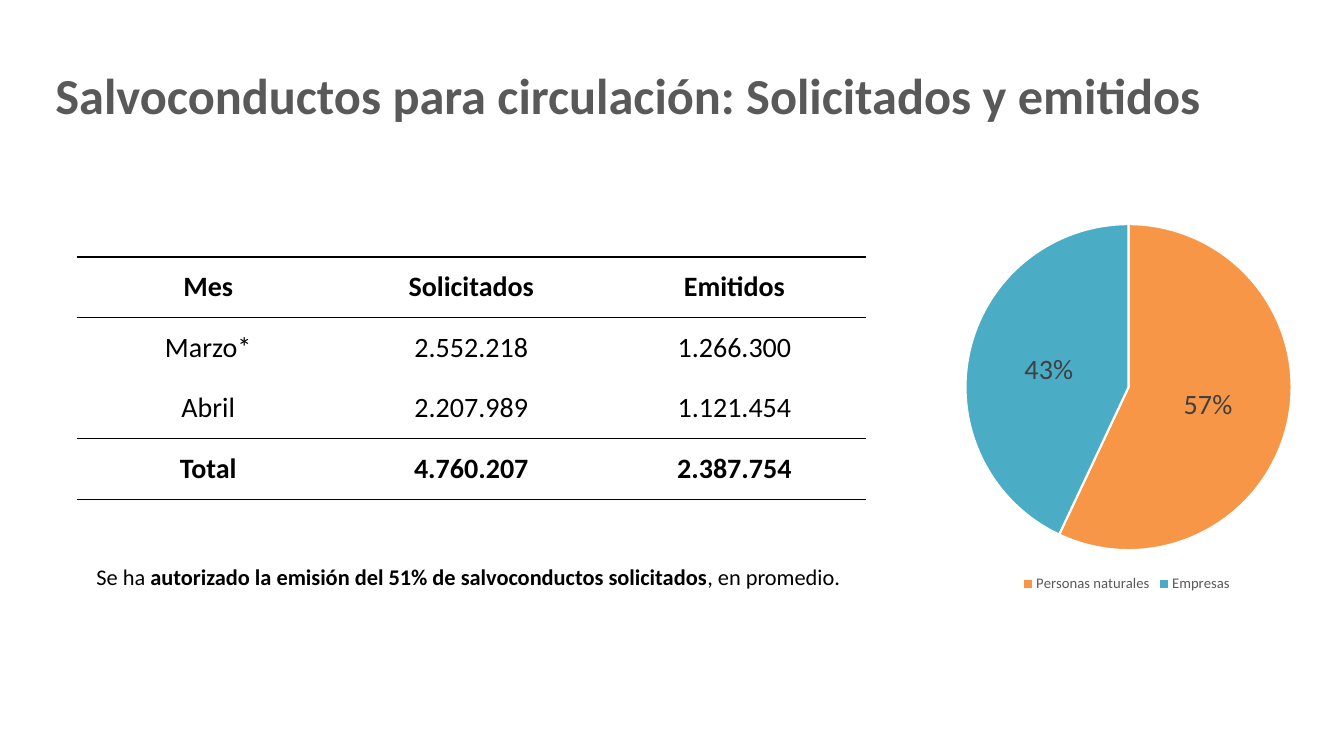
import pptx
import pptx.chart.data
import pptx.dml.color
import pptx.enum.chart
import pptx.enum.text
import pptx.oxml
import pptx.oxml.ns
import pptx.util

PX = 9144
FONT = "Calibri"
BLACK, GREY, DARK, WHITE = "000000", "595959", "404040", "FFFFFF"
PLAIN_TABLE = "{2D5ABB26-0587-4C30-8999-92F81FD0307C}"
NS = pptx.oxml.ns.nsdecls
ANCHOR = pptx.enum.text.MSO_ANCHOR
ALIGN = pptx.enum.text.PP_ALIGN

ROWS = [
    ("Mes", "Solicitados", "Emitidos"),
    ("Marzo*", "2.552.218", "1.266.300"),
    ("Abril", "2.207.989", "1.121.454"),
    ("Total", "4.760.207", "2.387.754"),
]
RULED_ROWS = (0, 3)
SHARES = {"Personas naturales": (0.57, "F79646"), "Empresas": (0.43, "4BACC6")}
NOTE = [
    ("Se ha ", False),
    ("autorizado la emisión del 51% de salvoconductos solicitados", True),
    (", en promedio.", False),
]


def px(*lengths):
    return [pptx.util.Emu(length * PX) for length in lengths]


def colour(value):
    return pptx.dml.color.RGBColor.from_string(value)


def assign(target, **values):
    for name, value in values.items():
        setattr(target, name, value)


class Slide:
    """Holds the text style and the current page, and adds elements to it."""

    def __init__(self, deck, font):
        self.font = font
        self.page = deck.slides.add_slide(deck.slide_layouts[6])

    def style(self, font, size, shade, bold=False):
        assign(font, name=self.font, size=pptx.util.Pt(size), bold=bold)
        font.color.rgb = colour(shade)

    def add_spans(self, para, spans, size, shade, align):
        para.alignment = align
        for text, bold in spans:
            span = para.add_run()
            span.text = text
            self.style(span.font, size, shade, bold)

    def text(self, place, spans, size, shade, align, anchor, insets):
        frame = self.page.shapes.add_textbox(*px(*place)).text_frame
        side, edge = px(*insets)
        assign(frame, word_wrap=True, vertical_anchor=anchor, margin_left=side,
               margin_right=side, margin_top=edge, margin_bottom=edge)
        self.add_spans(frame.paragraphs[0], spans, size, shade, align)

    def rule(self, cell):
        for side in ("lnT", "lnB"):
            cell._tc.get_or_add_tcPr().append(pptx.oxml.parse_xml(
                f'<a:{side} {NS("a")} w="12700"><a:solidFill>'
                f'<a:srgbClr val="{BLACK}"/></a:solidFill></a:{side}>'))

    def table(self, place, rows, ruled_rows, size):
        frame = self.page.shapes.add_table(len(rows), len(rows[0]), *px(*place))
        table = frame.table
        assign(table, first_row=False, horz_banding=False)
        table._tbl.tblPr.find(pptx.oxml.ns.qn("a:tableStyleId")).text = PLAIN_TABLE
        side, edge = px(27, 13)
        for r, row in enumerate(rows):
            ruled = r in ruled_rows
            for c, text in enumerate(row):
                cell = table.cell(r, c)
                assign(cell, vertical_anchor=ANCHOR.BOTTOM, margin_left=side,
                       margin_right=side, margin_top=edge, margin_bottom=edge)
                if ruled:
                    self.rule(cell)
                cell.fill.background()
                self.add_spans(cell.text_frame.paragraphs[0], [(text, ruled)],
                               size, BLACK, ALIGN.CENTER)

    def pie(self, place, shares, layout):
        data = pptx.chart.data.CategoryChartData(number_format="0%")
        data.categories = list(shares)
        data.add_series("Series 1", [share for share, _ in shares.values()])
        kind = pptx.enum.chart.XL_CHART_TYPE.PIE
        chart = self.page.shapes.add_chart(kind, *px(*place), data).chart
        assign(chart, has_title=False, has_legend=True)
        self.style(chart.font, 10, BLACK)
        assign(chart.legend, include_in_layout=False,
               position=pptx.enum.chart.XL_LEGEND_POSITION.BOTTOM)
        self.style(chart.legend.font, 10.5, GREY)

        plot = chart.plots[0]
        assign(plot, vary_by_categories=True, has_data_labels=True)
        assign(plot.data_labels, show_value=True, show_percentage=False,
               number_format="0%", number_format_is_linked=False,
               position=pptx.enum.chart.XL_LABEL_POSITION.CENTER)
        self.style(plot.data_labels.font, 20, DARK)
        for index, (_, shade) in enumerate(shares.values()):
            slice_format = plot.series[0].points[index].format
            slice_format.fill.solid()
            slice_format.fill.fore_color.rgb = colour(shade)
            slice_format.line.color.rgb = colour(WHITE)
            slice_format.line.width = pptx.util.Pt(1.5)

        area = chart._chartSpace.chart.plotArea
        for old in area.findall(pptx.oxml.ns.qn("c:layout")):
            area.remove(old)
        sizes = "".join(f'<c:{key} val="{value}"/>' for key, value in layout.items())
        area.insert(0, pptx.oxml.parse_xml(
            f'<c:layout {NS("c")}><c:manualLayout><c:layoutTarget val="inner"/>'
            f'<c:xMode val="edge"/><c:yMode val="edge"/>{sizes}'
            '</c:manualLayout></c:layout>'))


def main():
    deck = pptx.Presentation()
    deck.slide_width, deck.slide_height = px(1333, 750)
    slide = Slide(deck, FONT)
    slide.table((76, 255, 783, 240), ROWS, RULED_ROWS, 20)
    slide.pie((931, 207, 373, 385), SHARES,
              {"x": 0.07, "y": 0.04, "w": 0.87, "h": 0.84})
    slide.text((73, 554, 783, 37), NOTE, 16, BLACK,
               ALIGN.CENTER, ANCHOR.TOP, (10, 5))
    slide.text((43, 58, 1179, 71),
               [("Salvoconductos para circulación: Solicitados y emitidos", True)],
               36, GREY, ALIGN.LEFT, ANCHOR.MIDDLE, (12, 6))
    deck.save("out.pptx")


if __name__ == "__main__":
    main()
